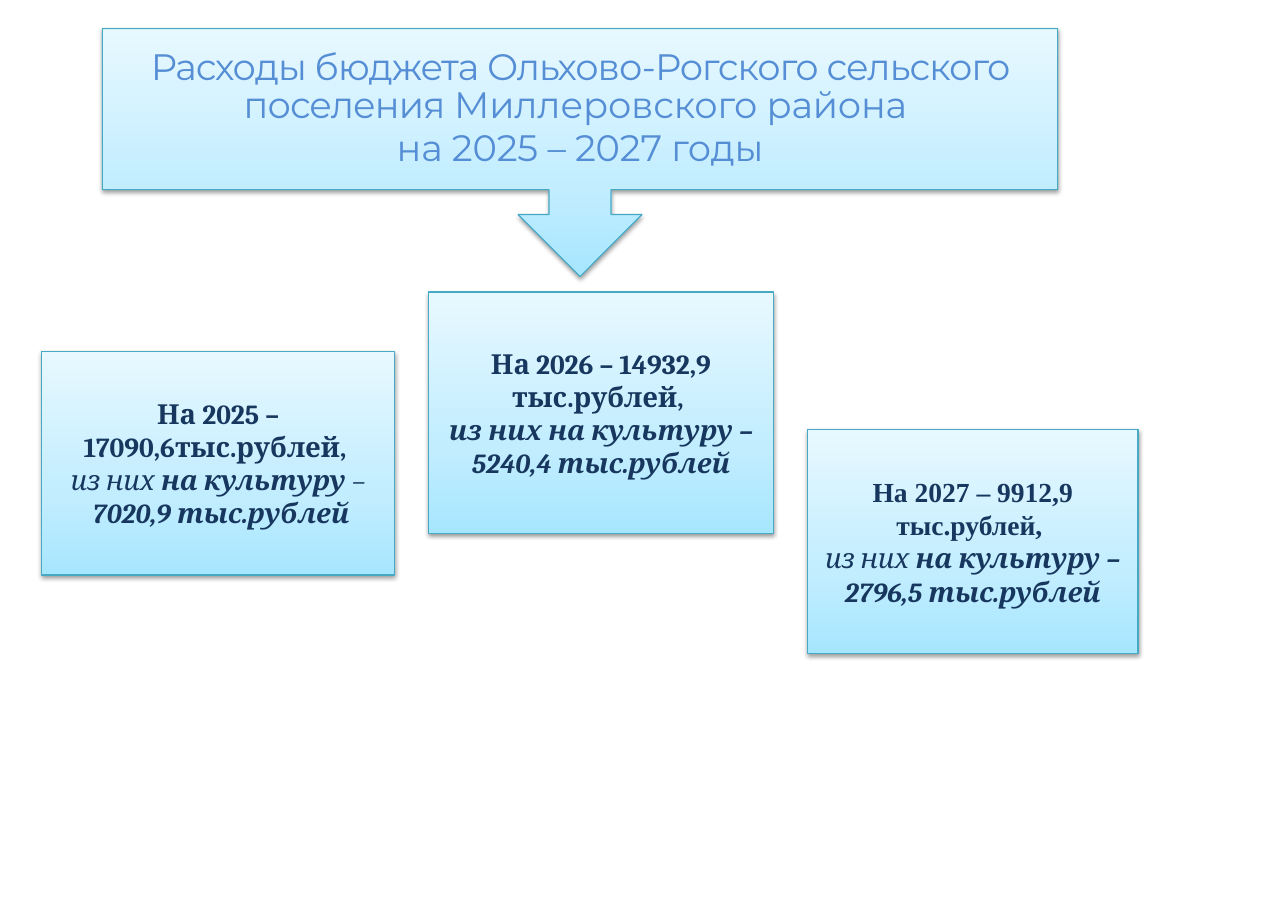
from lxml.etree import SubElement
from pptx import Presentation
from pptx.dml.color import RGBColor
from pptx.enum.shapes import MSO_SHAPE
from pptx.enum.text import MSO_ANCHOR, MSO_AUTO_SIZE, PP_ALIGN
from pptx.oxml.ns import qn
from pptx.util import Pt

# Content: paragraphs are lists of (text, style) runs
TITLE = [
    [("Расходы бюджета Ольхово-Рогского сельского поселения ", -0.6),
     ("Миллеровского района ", -0.1)],
    [("на 2025 – 2027 годы", -0.1)],
]
BOLD, ITALIC, BOTH = (True, False), (False, True), (True, True)
YEARS = [  # left, top, width, height, font of the first line, paragraphs
    (27.36, 229.68, 230.4, 146.16, "Cambria", [
        [("На 2025 – 17090,6тыс.рублей, ", BOLD)],
        [("из них ", ITALIC), ("на культуру ", BOTH), ("–", ITALIC)],
        [(" ", ITALIC), ("7020,9 тыс.рублей", BOTH)]]),
    (280.08, 190.8, 225.36, 157.68, "Cambria", [
        [("На 2026 – 14932,9 тыс.рублей, ", BOLD)],
        [("из них на культуру – 5240,4 тыс.рублей", BOTH)]]),
    (527.76, 280.8, 216, 146.16, "Times New Roman", [
        [("На 2027 – 9912,9 тыс.рублей, ", BOLD)],
        [("из них ", ITALIC), ("на культуру – 2796,5 тыс.рублей", BOTH)]]),
]

# Style
TITLE_BLUE = RGBColor(0x55, 0x8E, 0xD5)
NAVY = RGBColor(0x17, 0x37, 0x5E)
BORDER = RGBColor(0x46, 0xAA, 0xC5)
BLACK = RGBColor(0, 0, 0)
GRADIENT = [(0, RGBColor(0xA7, 0xE6, 0xFF)),
            (35, RGBColor(0xC1, 0xED, 0xFF)),
            (100, RGBColor(0xE7, 0xF8, 0xFF))]

# Callout: the arrow hangs below the part that holds the title
CALLOUT = (66.96, 18.72, 624.24, 162)
BODY_SHARE = 0.65


def add_panel(page, kind, left, top, width, height):
    """Add a shape with the pale blue gradient, thin border and soft shadow."""
    panel = page.shapes.add_shape(kind, Pt(left), Pt(top), Pt(width), Pt(height))
    panel.line.color.rgb = BORDER
    panel.line.width = Pt(0.75)
    panel.fill.gradient()
    panel.fill.gradient_angle = 90
    properties = panel._element.spPr

    # Three gradient stops
    stops = properties.find(qn("a:gradFill")).find(qn("a:gsLst"))
    for stop in list(stops):
        stops.remove(stop)
    for percent, color in GRADIENT:
        stop = SubElement(stops, qn("a:gs"), pos=str(percent * 1000))
        SubElement(stop, qn("a:srgbClr"), val=str(color))

    # Shadow straight down
    panel.shadow.inherit = False
    shadow = SubElement(properties.find(qn("a:effectLst")), qn("a:outerShdw"),
                        blurRad=str(Pt(3.1)), dist=str(Pt(1.6)),
                        dir="5400000", rotWithShape="0")
    shade = SubElement(shadow, qn("a:srgbClr"), val=str(BLACK))
    SubElement(shade, qn("a:alpha"), val="38000")
    return panel


def start_text(shape):
    frame = shape.text_frame
    frame.word_wrap = True
    frame.auto_size = MSO_AUTO_SIZE.NONE
    frame.vertical_anchor = MSO_ANCHOR.MIDDLE
    return frame


def add_para(frame, index):
    para = frame.add_paragraph() if index else frame.paragraphs[0]
    para.alignment = PP_ALIGN.CENTER
    return para


def add_span(para, text, font, size, color):
    span = para.add_run()
    span.text = text
    span.font.name = font
    span.font.size = Pt(size)
    span.font.color.rgb = color
    return span


def add_title(page):
    left, top, width, height = CALLOUT
    add_panel(page, MSO_SHAPE.DOWN_ARROW_CALLOUT, *CALLOUT)
    title = page.shapes.title
    title.left, title.top = Pt(left), Pt(top)
    title.width, title.height = Pt(width), Pt(height * BODY_SHARE)
    page.shapes._spTree.append(title._element)  # in front of the callout
    frame = start_text(title)
    for index, runs in enumerate(TITLE):
        para = add_para(frame, index)
        para.line_spacing = Pt(25)
        para.space_before = Pt(3.5)
        for text, tracking in runs:
            span = add_span(para, text, "Montserrat", 24, TITLE_BLUE)
            span.font._element.set("spc", str(round(tracking * 100)))


def add_year(page, left, top, width, height, first_font, paragraphs):
    box = add_panel(page, MSO_SHAPE.RECTANGLE, left, top, width, height)
    frame = start_text(box)
    for index, runs in enumerate(paragraphs):
        para = add_para(frame, index)
        for text, (bold, italic) in runs:
            font = "Cambria" if index else first_font
            span = add_span(para, text, font, 18, NAVY)
            span.font.bold, span.font.italic = bold, italic


def main():
    deck = Presentation()
    deck.slide_width, deck.slide_height = Pt(841.68), Pt(594.72)
    page = deck.slides.add_slide(deck.slide_layouts[5])
    add_title(page)
    for year in YEARS:
        add_year(page, *year)
    deck.save("out.pptx")


if __name__ == "__main__":
    main()
